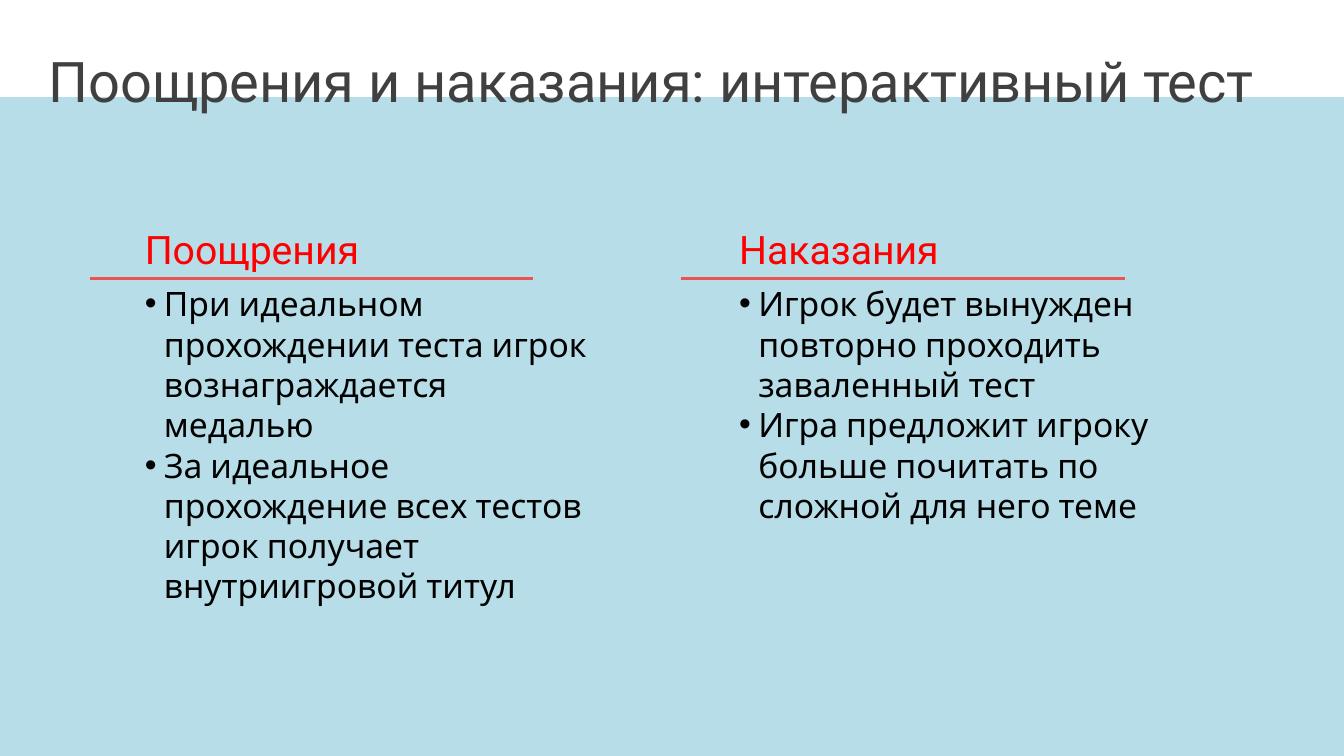
from dataclasses import dataclass

from lxml.etree import SubElement
from pptx import Presentation
from pptx.dml.color import RGBColor
from pptx.enum.shapes import MSO_CONNECTOR, MSO_SHAPE
from pptx.enum.text import MSO_ANCHOR
from pptx.oxml.ns import qn
from pptx.util import Cm, Pt


@dataclass(frozen=True)
class Theme:
    band: RGBColor = RGBColor(0xB7, 0xDE, 0xE8)
    rule: RGBColor = RGBColor(0xEA, 0x53, 0x50)
    title: RGBColor = RGBColor(0x40, 0x40, 0x40)
    heading: RGBColor = RGBColor(0xFF, 0x00, 0x00)
    body: RGBColor = RGBColor(0x00, 0x00, 0x00)
    title_size: Pt = Pt(40)
    heading_size: Pt = Pt(28)
    body_size: Pt = Pt(24)
    line_width: Pt = Pt(2)
    display_font: str = "Roboto"
    body_font: str = "Karla"


THEME = Theme()
SLIDE_WIDTH, SLIDE_HEIGHT = Cm(33.87), Cm(19.05)
BAND_TOP = Cm(2.49)
RULE_TOP = Cm(7.01)
COLUMN_WIDTH = Cm(11.18)
HEADING_HEIGHT = Cm(1.45)
BULLET_INDENT = Cm(0.48)

COLUMNS = [
    (Cm(2.26), Cm(3.4), "Поощрения", [
        "При идеальном прохождении теста игрок вознаграждается медалью",
        "За идеальное прохождение всех тестов игрок получает внутриигровой титул",
    ]),
    (Cm(17.17), Cm(18.38), "Наказания", [
        "Игрок будет вынужден повторно проходить заваленный тест",
        "Игра предложит игроку больше почитать по сложной для него теме",
    ]),
]


def add_band(slide):
    band = slide.shapes.add_shape(
        MSO_SHAPE.RECTANGLE, 0, BAND_TOP, SLIDE_WIDTH, SLIDE_HEIGHT - BAND_TOP)
    band.shadow.inherit = False
    band.fill.solid()
    band.fill.fore_color.rgb = THEME.band
    band.line.color.rgb = THEME.band
    band.line.width = THEME.line_width


def add_rule(slide, left):
    rule = slide.shapes.add_connector(
        MSO_CONNECTOR.STRAIGHT, left, RULE_TOP, left + COLUMN_WIDTH, RULE_TOP)
    rule.line.color.rgb = THEME.rule
    rule.line.width = THEME.line_width
    SubElement(rule.element.spPr, qn("a:effectLst"))


def add_bullet(paragraph):
    properties = paragraph._p.get_or_add_pPr()
    properties.set("marL", str(BULLET_INDENT))
    properties.set("indent", str(-BULLET_INDENT))
    SubElement(properties, qn("a:buFont")).set("typeface", "Arial")
    SubElement(properties, qn("a:buChar")).set("char", "•")


def add_text(slide, box, lines, size, color, font,
             anchor=MSO_ANCHOR.TOP, bulleted=False):
    frame = slide.shapes.add_textbox(*box).text_frame
    frame.word_wrap = True
    frame.vertical_anchor = anchor
    frame.text = "\n".join(lines)
    for paragraph in frame.paragraphs:
        if bulleted:
            add_bullet(paragraph)
        for run in paragraph.runs:
            run.font.size = size
            run.font.name = font
            run.font.color.rgb = color


def add_title(slide, title):
    add_text(slide, (Cm(0.97), Cm(1.08), Cm(31.01), Cm(1.9)), [title],
             THEME.title_size, THEME.title, THEME.display_font, MSO_ANCHOR.MIDDLE)


def add_column(slide, rule_left, text_left, heading, points):
    add_rule(slide, rule_left)
    add_text(slide, (text_left, RULE_TOP - HEADING_HEIGHT, COLUMN_WIDTH, HEADING_HEIGHT),
             [heading], THEME.heading_size, THEME.heading, THEME.display_font)
    add_text(slide, (text_left, RULE_TOP, Cm(11.86), Cm(6.4)), points,
             THEME.body_size, THEME.body, THEME.body_font, bulleted=True)


def main():
    presentation = Presentation()
    presentation.slide_width = SLIDE_WIDTH
    presentation.slide_height = SLIDE_HEIGHT
    slide = presentation.slides.add_slide(presentation.slide_layouts[6])
    add_band(slide)
    add_title(slide, "Поощрения и наказания: интерактивный тест")
    for column in COLUMNS:
        add_column(slide, *column)
    presentation.save("out.pptx")


if __name__ == "__main__":
    main()
